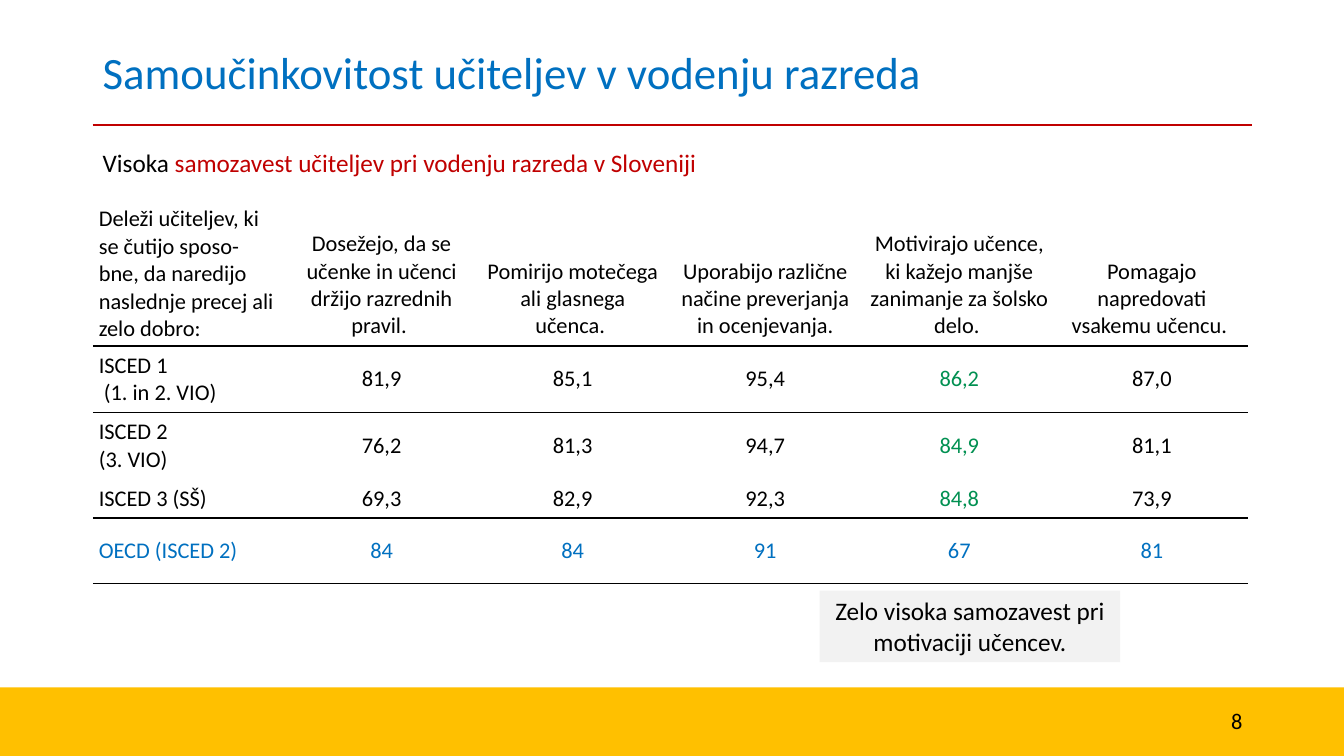
from lxml import etree
from pptx import Presentation
from pptx.dml.color import RGBColor
from pptx.enum import shapes, text
from pptx.oxml import ns
from pptx.util import Inches, Pt

COLORS = {"black": "000000", "blue": "0070C0", "red": "C00000", "green": "009051",
          "yellow": "FFC000", "gray": "F2F2F2"}
FONT = "Calibri"
NO_GRID_STYLE = "{2D5ABB26-0587-4C30-8999-92F81FD0307C}"
LEFT, CENTER, RIGHT = text.PP_ALIGN.LEFT, text.PP_ALIGN.CENTER, text.PP_ALIGN.RIGHT
TOP, MIDDLE, BOTTOM = text.MSO_ANCHOR.TOP, text.MSO_ANCHOR.MIDDLE, text.MSO_ANCHOR.BOTTOM


def set_text(frame, content, size, color="black", align=LEFT):
    frame.word_wrap = True
    frame.text = content
    for paragraph in frame.paragraphs:
        paragraph.alignment = align
        paragraph.font.name = FONT
        paragraph.font.size = Pt(size)
        paragraph.font.color.rgb = RGBColor.from_string(COLORS[color])


def add_border(cell, tag):
    """Draw a 1 pt black line on one side of a cell (a:lnT or a:lnB)."""
    properties = cell._tc.get_or_add_tcPr()
    line = etree.Element(ns.qn(tag), w=str(Pt(1)))
    fill = etree.SubElement(line, ns.qn("a:solidFill"))
    etree.SubElement(fill, ns.qn("a:srgbClr"), val=COLORS["black"])
    borders = [child for child in properties if child.tag.startswith(ns.qn("a:ln"))]
    properties.insert(len(borders), line)


presentation = Presentation()
presentation.slide_width = Inches(13.33)
presentation.slide_height = Inches(7.5)
slide = presentation.slides.add_slide(presentation.slide_layouts[6])

# Footer band and title rule
footer = slide.shapes.add_shape(shapes.MSO_SHAPE.RECTANGLE, 0, Inches(6.82),
                                Inches(13.33), Inches(0.68))
footer.shadow.inherit = False
footer.fill.solid()
footer.fill.fore_color.rgb = RGBColor.from_string(COLORS["yellow"])
footer.line.fill.background()

rule = slide.shapes.add_connector(shapes.MSO_CONNECTOR.STRAIGHT, Inches(0.92), Inches(1.24),
                                  Inches(12.42), Inches(1.24))
rule.line.color.rgb = RGBColor.from_string(COLORS["red"])
rule.line.width = Pt(2)
etree.SubElement(rule._element.spPr, ns.qn("a:effectLst"))

# Title, lead sentence and slide number
title = slide.shapes.add_textbox(Inches(0.92), Inches(0.4), Inches(11.5), Inches(0.68))
set_text(title.text_frame, "Samoučinkovitost učiteljev v vodenju razreda", 32, "blue")
title.text_frame.vertical_anchor = MIDDLE
title.text_frame.paragraphs[0].line_spacing = 0.9

lead = slide.shapes.add_textbox(Inches(0.92), Inches(1.37), Inches(11.5), Inches(0.5))
set_text(lead.text_frame, "Visoka ", 18)
lead_paragraph = lead.text_frame.paragraphs[0]
lead_paragraph.line_spacing = 1.14
emphasis = lead_paragraph.add_run()
emphasis.text = "samozavest učiteljev pri vodenju razreda v Sloveniji"
emphasis.font.color.rgb = RGBColor.from_string(COLORS["red"])

number = slide.shapes.add_textbox(Inches(11.54), Inches(6.95), Inches(0.88), Inches(0.4))
set_text(number.text_frame, "8", 16, align=RIGHT)
number.text_frame.vertical_anchor = MIDDLE

# Table of shares
rows = [
    ["Deleži učiteljev, ki se čutijo sposo-bne, da naredijo naslednje precej ali zelo dobro:",
     "Dosežejo, da se učenke in učenci držijo razrednih pravil. ",
     "Pomirijo motečega ali glasnega učenca. ",
     "Uporabijo različne načine preverjanja in ocenjevanja.",
     "Motivirajo učence, ki kažejo manjše zanimanje za šolsko delo. ",
     "Pomagajo napredovati vsakemu učencu. "],
    ["ISCED 1\n (1. in 2. VIO)", "81,9", "85,1", "95,4", "86,2", "87,0"],
    ["ISCED 2\n(3. VIO)", "76,2", "81,3", "94,7", "84,9", "81,1"],
    ["ISCED 3 (SŠ)", "69,3", "82,9", "92,3", "84,8", "73,9"],
    ["OECD (ISCED 2)", "84", "84", "91", "67", "81"],
]
column_widths = [1.91, 1.91, 1.88, 1.94, 1.91, 1.91]
row_heights = [1.48, 0.66, 0.66, 0.38, 0.65]
row_heights[0] = 1.37
row_borders = {0: ["a:lnB"], 1: ["a:lnT"], 3: ["a:lnB"], 4: ["a:lnT", "a:lnB"]}
last_row, motivation_column = len(rows) - 1, 4

frame = slide.shapes.add_table(len(rows), len(column_widths), Inches(0.92), Inches(1.98),
                               Inches(sum(column_widths)), Inches(sum(row_heights)))
table = frame.table
table.first_row = table.horz_banding = False
table._tbl.tblPr.find(ns.qn("a:tableStyleId")).text = NO_GRID_STYLE
for column, width in zip(table.columns, column_widths):
    column.width = Inches(width)

for r, values in enumerate(rows):
    table.rows[r].height = Inches(row_heights[r])
    for c, value in enumerate(values):
        cell = table.cell(r, c)
        cell.margin_left = cell.margin_right = Inches(0.06)
        cell.margin_top = cell.margin_bottom = Inches(0.06)
        cell.fill.background()
        if r == 0:
            cell.vertical_anchor = BOTTOM
        else:
            cell.vertical_anchor = TOP if c == 0 and r < last_row else MIDDLE
        if r == last_row:
            color = "blue"
        else:
            color = "green" if r > 0 and c == motivation_column else "black"
        set_text(cell.text_frame, value, 16, color, LEFT if c == 0 else CENTER)
        for tag in row_borders.get(r, []):
            add_border(cell, tag)

# Remark below the motivation column
remark = slide.shapes.add_shape(shapes.MSO_SHAPE.RECTANGLE, Inches(8.13), Inches(5.86),
                                Inches(2.98), Inches(0.71))
remark.shadow.inherit = False
remark.fill.solid()
remark.fill.fore_color.rgb = RGBColor.from_string(COLORS["gray"])
remark.line.fill.background()
set_text(remark.text_frame, "Zelo visoka samozavest pri motivaciji učencev.", 18, align=CENTER)
remark.text_frame.vertical_anchor = TOP

presentation.save("out.pptx")
